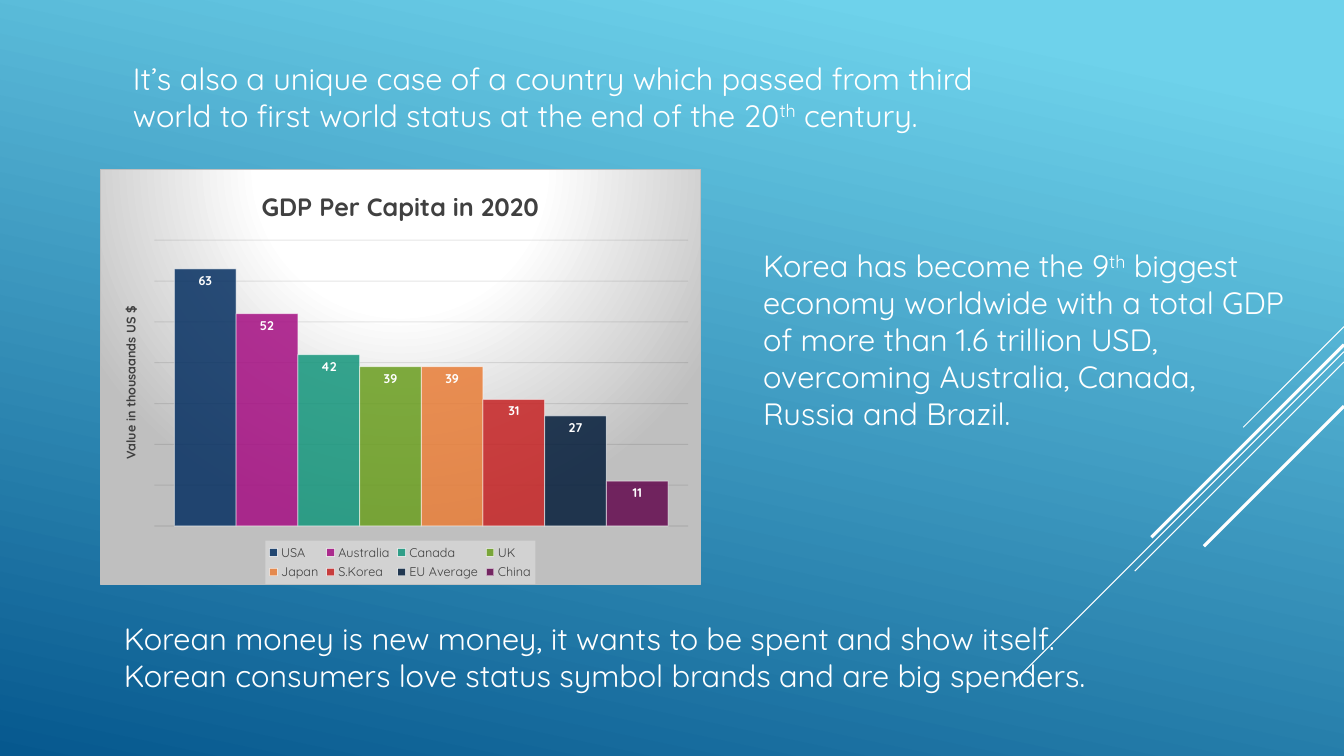
from dataclasses import dataclass

from lxml import etree
from pptx import Presentation
from pptx.chart.data import CategoryChartData
from pptx.dml.color import RGBColor as RGB
from pptx.enum.chart import XL_CHART_TYPE as ChartType
from pptx.enum.chart import XL_LABEL_POSITION as LabelPos
from pptx.enum.chart import XL_LEGEND_POSITION as LegendPos
from pptx.enum.shapes import MSO_CONNECTOR as Connector
from pptx.oxml import parse_xml
from pptx.oxml.ns import nsdecls, qn
from pptx.util import Inches, Pt

W, H = Inches(13.33), Inches(7.5)


@dataclass(frozen=True)
class Theme:
    font: str = "Quicksand"
    white: str = "FFFFFF"
    sky: str = "6ED2EB"
    sea: str = "06588E"
    ink: str = "404040"
    grid: str = "0D0D0D"
    silver: str = "BFBFBF"
    legend: str = "F2F2F2"
    body: int = 22
    title: int = 18
    base: int = 10
    small: int = 9
    thin: float = 0.75
    thick: float = 2.25


T = Theme()

GDP = [
    ("USA", 63, "052F61"),
    ("Australia", 52, "A50E82"),
    ("Canada", 42, "14967C"),
    ("UK", 39, "6A9E1F"),
    ("Japan", 39, "E87D37"),
    ("S.Korea", 31, "C62324"),
    ("EU Average", 27, "031C3A"),
    ("China", 11, "63084E"),
]
STREAKS = [
    (43.2, 13.33, T.thin),
    (46.53, 43.47, T.thin),
    (47.87, 27.67, T.thin),
    (45.6, 25.47, T.thick),
    (53.73, 18.53, T.thick),
]
TEXTS = [
    ((9.15, 7.2, 68.34, 11.2), [
        ("It’s also a unique case of a country which passed from third "
         "world to first world status at the end of the 20", 0),
        ("th", 30), (" century.", 0)]),
    ((8.48, 81.33, 78.54, 11.2), [
        ("Korean money is new money, it wants to be spent and show itself. "
         "Korean consumers love status symbol brands and are big spenders.", 0)]),
    ((56.04, 32, 40.29, 26), [
        ("Korea has become the 9", 0), ("th", 30),
        (" biggest economy worldwide with a total GDP of more than "
         "1.6 trillion USD, overcoming Australia, Canada, Russia and Brazil.", 0)]),
]


def share(x, y, w, h):
    return [int(v * side / 100) for v, side in zip((x, y, w, h), (W, H, W, H))]


def put(obj, values):
    for name, value in values.items():
        setattr(obj, name, value)


def style(font, size, color, bold=False):
    put(font, {"name": T.font, "size": Pt(size), "bold": bold})
    font.color.rgb = RGB.from_string(color)


def stroke(line, color, width):
    line.color.rgb = RGB.from_string(color)
    line.width = Pt(width)


def fade(element, *percents):
    for color, percent in zip(element.iter(qn("a:srgbClr")), percents):
        etree.SubElement(color, qn("a:alpha")).set("val", str(percent * 1000))


def paint_background(s):
    fill = s.background.fill
    fill.gradient()
    fill.gradient_angle = 258
    for stop, pos, color in zip(fill.gradient_stops, (0.1, 1), (T.sky, T.sea)):
        stop.position = pos
        stop.color.rgb = RGB.from_string(color)


def add_streak(s, top, run, width):
    y, d = int(H * top / 100), int(H * run / 100)
    line = s.shapes.add_connector(Connector.STRAIGHT, W, y, W - d, y + d)
    stroke(line.line, T.white, width)
    etree.SubElement(line._element.spPr, qn("a:effectLst"))


def add_text(s, box, runs):
    tf = s.shapes.add_textbox(*share(*box)).text_frame
    tf.word_wrap = True
    p = tf.paragraphs[0]
    for text, raised in runs:
        r = p.add_run()
        r.text = text
        style(r.font, T.body, T.white)
        if raised:
            r._r.get_or_add_rPr().set("baseline", str(raised * 1000))


def layout(x, y, w, h, inner=False):
    target = '<c:layoutTarget val="inner"/>' if inner else ""
    sizes = "".join(f'<c:{k} val="{v}"/>' for k, v in zip("xywh", (x, y, w, h)))
    return parse_xml(
        f'<c:layout {nsdecls("c")}><c:manualLayout>{target}'
        f'<c:xMode val="edge"/><c:yMode val="edge"/>{sizes}'
        '</c:manualLayout></c:layout>')


def surface(fill, line="<a:ln><a:noFill/></a:ln>"):
    return parse_xml(f'<c:spPr {nsdecls("c", "a")}>{fill}{line}</c:spPr>')


def solid(color):
    return f'<a:solidFill><a:srgbClr val="{color}"/></a:solidFill>'


def set_title(owner, text, size):
    owner.has_title = True
    title = owner.chart_title if hasattr(owner, "chart_title") else owner.axis_title
    title.text_frame.text = text
    style(title.text_frame.paragraphs[0].runs[0].font, size, T.ink, True)
    return title


def format_series(ser, color):
    ser.format.fill.solid()
    ser.format.fill.fore_color.rgb = RGB.from_string(color)
    stroke(ser.format.line, T.white, T.thin)
    fade(ser._element, 85, 50)
    labels = ser.data_labels
    put(labels, {"show_value": True, "position": LabelPos.INSIDE_END,
                 "number_format": "#,##0", "number_format_is_linked": False})
    style(labels.font, T.small, T.white, True)


def format_axes(chart):
    chart.category_axis.visible = False
    val = chart.value_axis
    put(val, {"visible": False, "minimum_scale": 0, "maximum_scale": 70,
              "major_unit": 10, "has_major_gridlines": True})
    stroke(val.major_gridlines.format.line, T.grid, T.thin)
    fade(val._element.find(qn("c:majorGridlines")), 10)
    title = set_title(val, "Value in thousaands US $", T.small)
    for body in title._element.iter(qn("a:bodyPr")):
        body.set("rot", "-5400000")
        body.set("vert", "horz")


def format_legend(chart):
    chart.has_legend = True
    legend = chart.legend
    put(legend, {"position": LegendPos.BOTTOM, "include_in_layout": False})
    style(legend.font, T.small, T.ink)
    el = legend._element
    for old in el.findall(qn("c:layout")):
        el.remove(old)
    el.find(qn("c:legendPos")).addnext(layout(0.275, 0.895, 0.45, 0.105))
    box = surface(solid(T.legend))
    fade(box, 39)
    el.find(qn("c:txPr")).addprevious(box)


def format_frame(chart):
    space = chart._chartSpace
    area = space.find(qn("c:chart")).find(qn("c:plotArea"))
    for old in area.findall(qn("c:layout")):
        area.remove(old)
    area.insert(0, layout(0.09, 0.17, 0.89, 0.69, inner=True))
    stops = "".join(f'<a:gs pos="{pos * 1000}"><a:srgbClr val="{color}"/></a:gs>'
                    for pos, color in ((0, T.white), (39, T.white), (100, T.silver)))
    glow = (f'<a:gradFill><a:gsLst>{stops}</a:gsLst><a:path path="circle">'
            '<a:fillToRect l="50000" t="-80000" r="50000" b="180000"/>'
            '</a:path></a:gradFill>')
    border = f'<a:ln w="{Pt(T.thin)}">{solid(T.silver)}</a:ln>'
    space.find(qn("c:txPr")).addprevious(surface(glow, border))


def add_gdp_chart(s, box):
    data = CategoryChartData(number_format="#,##0")
    data.categories = ["1"]
    for name, value, _ in GDP:
        data.add_series(name, [value])
    chart = s.shapes.add_chart(ChartType.COLUMN_CLUSTERED, *share(*box), data).chart
    style(chart.font, T.base, T.white)
    set_title(chart, "GDP Per Capita in 2020", T.title)
    plot = chart.plots[0]
    put(plot, {"gap_width": 65, "overlap": 0, "vary_by_categories": False})
    for ser, (_, _, color) in zip(plot.series, GDP):
        format_series(ser, color)
    format_axes(chart)
    format_legend(chart)
    format_frame(chart)


def main():
    prs = Presentation()
    put(prs, {"slide_width": W, "slide_height": H})
    s = prs.slides.add_slide(prs.slide_layouts[6])
    paint_background(s)
    for streak in STREAKS:
        add_streak(s, *streak)
    add_gdp_chart(s, (7.43, 22.4, 44.71, 54.93))
    for box, runs in TEXTS:
        add_text(s, box, runs)
    prs.save("out.pptx")


if __name__ == "__main__":
    main()
